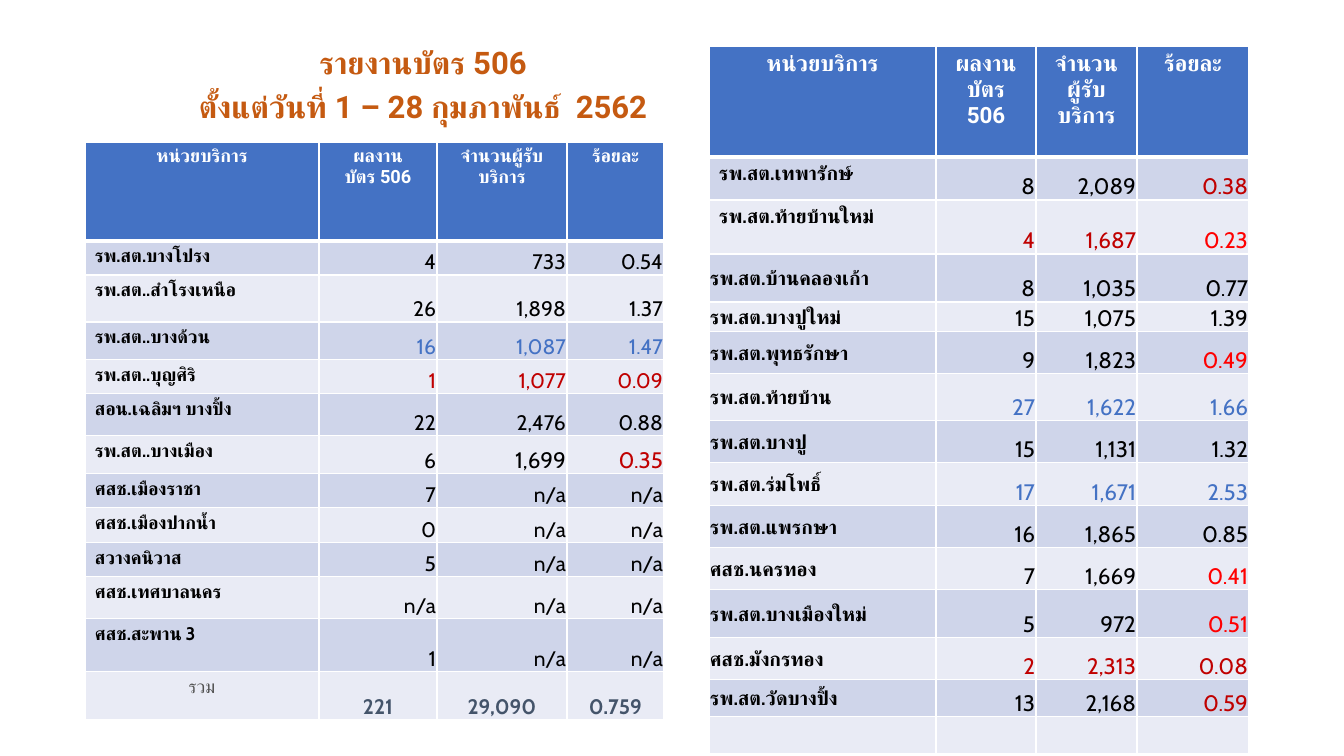
from dataclasses import dataclass

from lxml import etree
from pptx import Presentation
from pptx import util as u
from pptx.dml.color import RGBColor
from pptx.enum import text
from pptx.oxml.ns import qn

PX = 914400 / 100.8

WHITE = RGBColor(0xFF, 0xFF, 0xFF)
BLACK = RGBColor(0x00, 0x00, 0x00)
ORANGE = RGBColor(0xC5, 0x5A, 0x11)
BLUE = RGBColor(0x44, 0x72, 0xC4)
DARK_RED = RGBColor(0xC0, 0x00, 0x00)
RED = RGBColor(0xFF, 0x00, 0x00)
GREY = RGBColor(0x52, 0x52, 0x52)
SLATE = RGBColor(0x44, 0x54, 0x6A)
BANDS = (RGBColor(0xCF, 0xD5, 0xEA), RGBColor(0xE9, 0xEB, 0xF5))

LEFT, CENTER, RIGHT = text.PP_ALIGN.LEFT, text.PP_ALIGN.CENTER, text.PP_ALIGN.RIGHT
TOP, MIDDLE, BOTTOM = text.MSO_ANCHOR.TOP, text.MSO_ANCHOR.MIDDLE, text.MSO_ANCHOR.BOTTOM
TIGHT = (1, 1, 1, 0)


@dataclass(frozen=True)
class Style:
    size: float
    color: RGBColor
    font: str = "Cabin"
    bold: bool = False
    align: text.PP_ALIGN = LEFT
    anchor: text.MSO_ANCHOR = TOP
    inset: tuple[int, int, int, int] = TIGHT


@dataclass(frozen=True)
class Unit:
    height: int
    name: str = ""
    figures: tuple[str, str, str] = ("", "", "")
    color: RGBColor = BLACK
    rate_color: RGBColor | None = None
    indented: bool = True
    total: bool = False
    large_from: int = 3  # first figure set one point larger


@dataclass(frozen=True)
class Report:
    left: int
    top: int
    widths: tuple[int, ...]
    header_height: int
    headings: tuple[str, ...]
    name_size: int
    figure_size: int
    inset: tuple[int, int, int, int]
    units: tuple[Unit, ...]


SOUTH = Report(
    709, 46, (227, 100, 101, 112), 111,
    ("หน่วยบริการ", "ผลงานบัตร\n506", "จำนวนผู้รับ\nบริการ", "ร้อยละ"),
    14, 16, (10, 5, 10, 5),
    (
        Unit(43, "รพ.สต.เทพารักษ์", ("8", "2,089", "0.38"), rate_color=DARK_RED),
        Unit(54, "รพ.สต.ท้ายบ้านใหม่", ("4", "1,687", "0.23"), DARK_RED, RED),
        Unit(48, "รพ.สต.บ้านคลองเก้า", ("8", "1,035", "0.77"), indented=False),
        Unit(30, "รพ.สต.บางปูใหม่", ("15", "1,075", "1.39"), indented=False),
        Unit(42, "รพ.สต.พุทธรักษา", ("9", "1,823", "0.49"), rate_color=RED, indented=False),
        Unit(47, "รพ.สต.ท้ายบ้าน", ("27", "1,622", "1.66"), BLUE, indented=False),
        Unit(42, "รพ.สต.บางปู", ("15", "1,131", "1.32"), indented=False),
        Unit(43, "รพ.สต.ร่มโพธิ์", ("17", "1,671", "2.53"), BLUE, indented=False),
        Unit(42, "รพ.สต.แพรกษา", ("16", "1,865", "0.85"), indented=False),
        Unit(42, "ศสช.นครทอง", ("7", "1,669", "0.41"), rate_color=RED, indented=False),
        Unit(48, "รพ.สต.บางเมืองใหม่", ("5", "972", "0.51"), rate_color=RED, indented=False),
        Unit(42, "ศสช.มังกรทอง", ("2", "2,313", "0.08"), DARK_RED, indented=False),
        Unit(37, "รพ.สต.วัดบางปิ้ง", ("13", "2,168", "0.59"), rate_color=DARK_RED, indented=False),
        Unit(37, indented=False),
    ),
)

NORTH = Report(
    85, 142, (234, 118, 130, 97), 99,
    ("หน่วยบริการ", "ผลงาน\nบัตร 506", "จำนวนผู้รับ\nบริการ", "ร้อยละ"),
    13, 15, (10, 4, 10, 4),
    (
        Unit(34, "รพ.สต.บางโปรง", ("4", "733", "0.54")),
        Unit(47, "รพ.สต..สำโรงเหนือ", ("26", "1,898", "1.37")),
        Unit(38, "รพ.สต..บางด้วน", ("16", "1,087", "1.47"), BLUE),
        Unit(34, "รพ.สต..บุญศิริ", ("1", "1,077", "0.09"), DARK_RED),
        Unit(42, "สอน.เฉลิมฯ บางปิ้ง", ("22", "2,476", "0.88")),
        Unit(38, "รพ.สต..บางเมือง", ("6", "1,699", "0.35"), rate_color=DARK_RED, large_from=1),
        Unit(34, "ศสช.เมืองราชา", ("7", "n/a", "n/a")),
        Unit(35, "ศสช.เมืองปากน้ำ", ("0", "n/a", "n/a")),
        Unit(34, "สวางคนิวาส", ("5", "n/a", "n/a")),
        Unit(42, "ศสช.เทศบาลนคร", ("n/a", "n/a", "n/a")),
        Unit(53, "ศสช.สะพาน 3", ("1", "n/a", "n/a")),
        Unit(48, "รวม", ("221", "29,090", "0.759"), SLATE, total=True),
    ),
)


def px(length: int) -> int:
    return round(length * PX)


def write(frame, words: str, style: Style) -> None:
    frame.text = words
    for line in frame.paragraphs:
        line.alignment = style.align
        for run in line.runs:
            run.font.size = u.Pt(style.size)
            run.font.name = style.font
            run.font.bold = style.bold
            run.font.color.rgb = style.color
            complex_font = etree.SubElement(run.font._element, qn("a:cs"))
            complex_font.set("typeface", style.font)


def add_borders(cell, bottom: int) -> None:
    properties = cell._tc.get_or_add_tcPr()
    for side, points in (("L", 1), ("R", 1), ("T", 1), ("B", bottom)):
        line = etree.SubElement(properties, qn(f"a:ln{side}"), w=str(u.Pt(points)))
        solid = etree.SubElement(line, qn("a:solidFill"))
        etree.SubElement(solid, qn("a:srgbClr"), val=str(WHITE))


def fill_cell(cell, words: str, fill: RGBColor, style: Style, bottom: int = 1) -> None:
    add_borders(cell, bottom)
    cell.fill.solid()
    cell.fill.fore_color.rgb = fill
    cell.vertical_anchor = style.anchor
    cell.margin_left, cell.margin_top, cell.margin_right, cell.margin_bottom = map(px, style.inset)
    write(cell.text_frame, words, style)


def add_report(slide, report: Report) -> None:
    heights = [report.header_height] + [unit.height for unit in report.units]
    table = slide.shapes.add_table(
        len(heights), len(report.widths), px(report.left), px(report.top),
        px(sum(report.widths)), px(sum(heights))).table
    for column, width in zip(table.columns, report.widths):
        column.width = px(width)
    for row, height in zip(table.rows, heights):
        row.height = px(height)

    # Header row
    heading_style = Style(report.figure_size if report is SOUTH else report.name_size,
                          WHITE, "Roboto", True, CENTER, TOP, report.inset)
    for column, heading in enumerate(report.headings):
        fill_cell(table.cell(0, column), heading, BLUE, heading_style, bottom=3)

    # Service units
    for row, unit in enumerate(report.units, start=1):
        band = BANDS[(row - 1) % 2]
        name_style = Style(
            report.name_size, GREY if unit.total else BLACK, bold=not unit.total,
            align=CENTER if unit.total else LEFT, anchor=TOP if unit.indented else MIDDLE,
            inset=report.inset if unit.indented else TIGHT)
        fill_cell(table.cell(row, 0), unit.name, band, name_style)
        for index, figure in enumerate(unit.figures):
            color = unit.rate_color if index == 2 and unit.rate_color else unit.color
            figure_style = Style(
                report.figure_size + (index >= unit.large_from), color, bold=unit.total,
                align=CENTER if unit.total else RIGHT, anchor=BOTTOM)
            fill_cell(table.cell(row, index + 1), figure, band, figure_style)


def add_title(slide) -> None:
    title = slide.shapes.add_textbox(px(151), px(46), px(535), px(87)).text_frame
    title.word_wrap = True
    write(title, "รายงานบัตร 506\nตั้งแต่วันที่ 1 – 28 กุมภาพันธ์  2562",
          Style(22.2, ORANGE, "Roboto", True, CENTER))
    for line in title.paragraphs:
        line.line_spacing = 0.8
        line.space_before = u.Pt(10)
        indents = line._p.get_or_add_pPr()
        indents.set("marL", str(px(40)))
        indents.set("indent", str(px(-31)))


def main() -> None:
    deck = Presentation()
    deck.slide_width, deck.slide_height = px(1344), px(756)
    slide = deck.slides.add_slide(deck.slide_layouts[6])
    add_title(slide)
    add_report(slide, SOUTH)
    add_report(slide, NORTH)
    deck.save("out.pptx")


if __name__ == "__main__":
    main()
